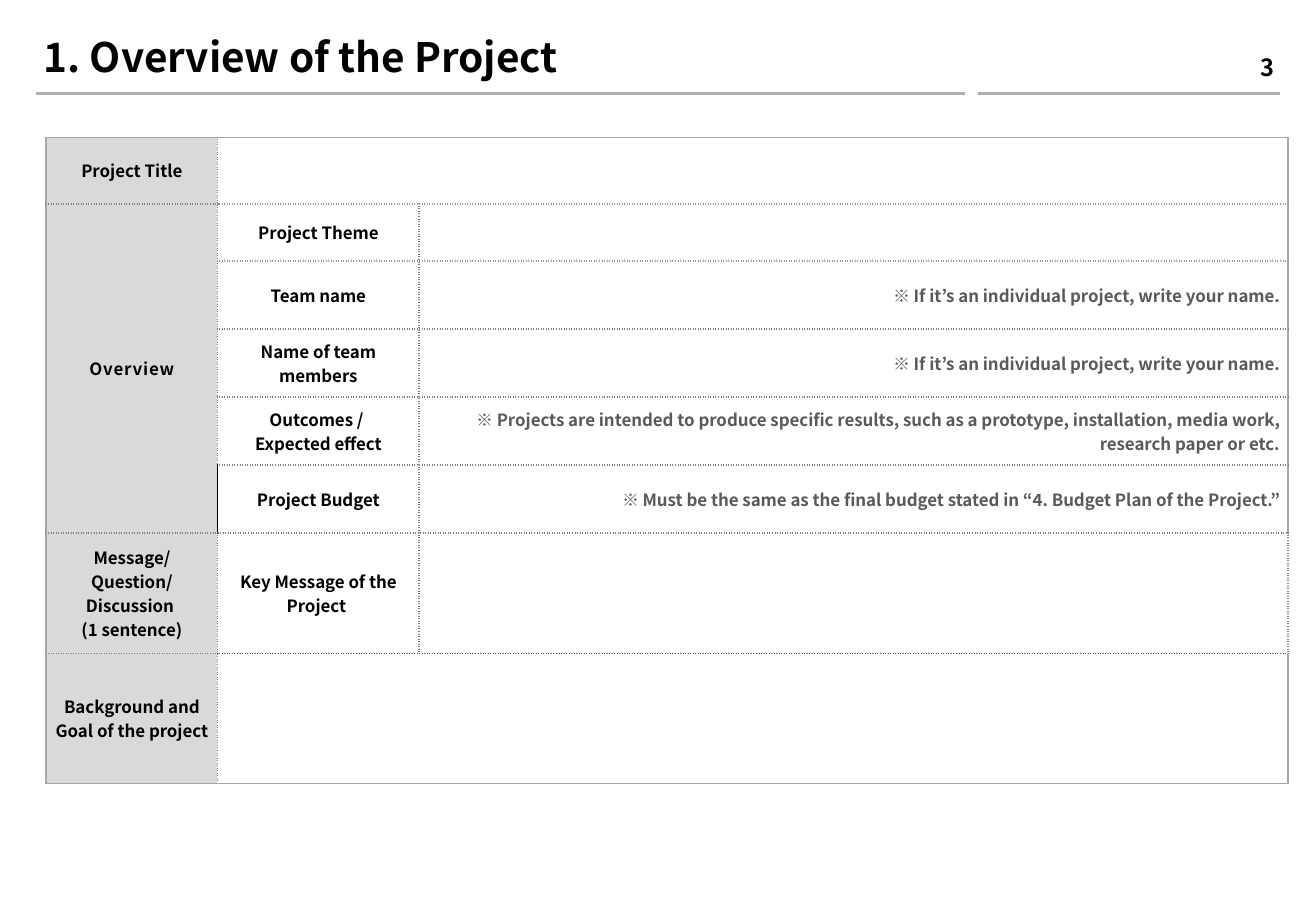
from dataclasses import dataclass

from lxml.etree import SubElement
from pptx import Presentation
from pptx.dml.color import RGBColor
from pptx.enum.shapes import MSO_CONNECTOR
from pptx.enum.text import MSO_ANCHOR, PP_ALIGN
from pptx.oxml.ns import qn
from pptx.util import Inches, Pt


@dataclass(frozen=True)
class Theme:
    font: str = "Noto Sans CJK KR"
    ink: str = "000000"
    hint: str = "595959"
    label_fill: str = "D9D9D9"
    rule: str = "AEAEAE"
    frame: str = "A6A6A6"
    grid: str = "808080"
    soft_grid: str = "989898"
    message_grid: str = "535353"
    title_size: float = 24
    number_size: float = 14
    table_size: float = 10


THEME = Theme()
NO_STYLE = "{2D5ABB26-0587-4C30-8999-92F81FD0307C}"

COLUMN_WIDTHS = [1.41, 1.66, 7.15]
ROW_HEIGHTS = [0.55, 0.47, 0.56, 0.56, 0.56, 0.56, 0.99, 1.07]
LAST_ROW, LAST_COLUMN = len(ROW_HEIGHTS) - 1, len(COLUMN_WIDTHS) - 1
BUDGET_ROW, MESSAGE_ROW = 5, 6

# First row, first column, last row, last column of each merged block
MERGES = [(0, 1, 0, 2), (1, 0, 5, 0), (7, 1, 7, 2)]

OWN_NAME = "※ If it’s an individual project, write your name."
OVERVIEW_ROWS = [
    ["Project Title", "", ""],
    ["Overview", "Project Theme", ""],
    ["", "Team name", OWN_NAME],
    ["", "Name of team members", OWN_NAME],
    ["", "Outcomes / \nExpected effect",
     "※ Projects are intended to produce specific results, such as a prototype, "
     "installation, media work, research paper or etc."],
    ["", "Project Budget",
     "※ Must be the same as the final budget stated in “4. Budget Plan of the Project.”"],
    ["Message/Question/Discussion \n(1 sentence)", "Key Message of the Project ", ""],
    ["Background and Goal of the project", "", ""],
]


def apply(target, values):
    for name, value in values.items():
        setattr(target, name, value)


def write(frame, text, size, color, align):
    frame.text = text
    for paragraph in frame.paragraphs:
        paragraph.alignment = align
        for run in paragraph.runs:
            apply(run.font, {"name": THEME.font, "size": Pt(size), "bold": True})
            run.font.color.rgb = RGBColor.from_string(color)
            SubElement(run.font._element, qn("a:ea")).set("typeface", THEME.font)


def add_rule(slide, start, end, y):
    rule = slide.shapes.add_connector(
        MSO_CONNECTOR.STRAIGHT, Inches(start), Inches(y), Inches(end), Inches(y))
    rule.line.color.rgb = RGBColor.from_string(THEME.rule)
    rule.line.width = Pt(2)
    SubElement(rule._element.spPr, qn("a:effectLst"))


def add_title(slide, text):
    title = slide.shapes.title
    apply(title, {"left": Inches(0.31), "top": Inches(0.21),
                  "width": Inches(7.36), "height": Inches(0.55)})
    inset = Inches(0.05)
    apply(title.text_frame, {
        "vertical_anchor": MSO_ANCHOR.MIDDLE, "word_wrap": True,
        "margin_left": inset, "margin_right": inset,
        "margin_top": inset, "margin_bottom": inset})
    write(title.text_frame, text, THEME.title_size, THEME.ink, PP_ALIGN.LEFT)
    title.text_frame.paragraphs[0].line_spacing = 0.9


def add_page_number(slide, text):
    number = slide.shapes.add_textbox(
        Inches(10.32), Inches(0.38), Inches(0.22), Inches(0.34)).text_frame
    inset = Inches(0.05)
    apply(number, {
        "vertical_anchor": MSO_ANCHOR.MIDDLE, "word_wrap": False,
        "margin_left": inset, "margin_right": inset,
        "margin_top": inset, "margin_bottom": inset})
    write(number, text, THEME.number_size, THEME.ink, PP_ALIGN.RIGHT)


def block_of(row, column):
    for block in MERGES:
        top, left, bottom, right = block
        if top <= row <= bottom and left <= column <= right:
            return block
    return row, column, row, column


def vertical_line(row, boundary):
    """Colour, width and dash of a column boundary beside one row."""
    if boundary == 0:
        return THEME.frame, 1, "solid"
    if boundary > LAST_COLUMN:
        return (THEME.grid, 1, "sysDot") if row == MESSAGE_ROW else (THEME.frame, 1, "solid")
    if boundary == 1 and row == BUDGET_ROW:
        return THEME.ink, 1, "solid"
    return THEME.grid, 1, "sysDot"


def horizontal_line(boundary, column):
    """Colour, width and dash of a row boundary within one column."""
    if boundary in (0, LAST_ROW + 1):
        return THEME.frame, 1, "solid"
    if column == 0:
        return THEME.grid, 1, "sysDot"
    if boundary == LAST_ROW:
        return THEME.message_grid, 0.5, "sysDot"
    return (THEME.soft_grid if boundary <= 2 else THEME.grid), 1, "sysDot"


def draw_borders(cell, row, column):
    top, left, bottom, right = block_of(row, column)
    origin = (row, column) == (top, left)
    sides = [
        ("a:lnL", column == left, vertical_line(row, left)),
        ("a:lnR", column == right, vertical_line(row, right + 1)),
        ("a:lnT", row == top, horizontal_line(top, column)),
        ("a:lnB", row == bottom, horizontal_line(bottom + 1, column)),
    ]
    properties = cell._tc.get_or_add_tcPr()
    for tag, on_edge, (color, width, dash) in sides:
        if origin or on_edge:
            line = SubElement(properties, qn(tag), w=str(Pt(width)))
            SubElement(SubElement(line, qn("a:solidFill")), qn("a:srgbClr"), val=color)
            SubElement(line, qn("a:prstDash"), val=dash)


def fill_cell(cell, row, column, text):
    apply(cell, {
        "vertical_anchor": MSO_ANCHOR.MIDDLE,
        "margin_left": Inches(0.07), "margin_right": Inches(0.07),
        "margin_top": Inches(0.02), "margin_bottom": Inches(0.02)})
    draw_borders(cell, row, column)
    if column == 0:
        cell.fill.solid()
        cell.fill.fore_color.rgb = RGBColor.from_string(THEME.label_fill)
    else:
        cell.fill.background()
    if text:
        is_hint = column == LAST_COLUMN
        write(cell.text_frame, text, THEME.table_size,
              THEME.hint if is_hint else THEME.ink,
              PP_ALIGN.RIGHT if is_hint else PP_ALIGN.CENTER)


def add_overview_table(slide):
    frame = slide.shapes.add_table(
        len(ROW_HEIGHTS), len(COLUMN_WIDTHS), Inches(0.38), Inches(1.13),
        Inches(sum(COLUMN_WIDTHS)), Inches(sum(ROW_HEIGHTS)))
    table = frame.table
    apply(table, {"first_row": False, "horz_banding": False})
    table._tbl.tblPr.find(qn("a:tableStyleId")).text = NO_STYLE
    for column, width in zip(table.columns, COLUMN_WIDTHS):
        column.width = Inches(width)
    for row, height in zip(table.rows, ROW_HEIGHTS):
        row.height = Inches(height)
    for top, left, bottom, right in MERGES:
        table.cell(top, left).merge(table.cell(bottom, right))
    for row, texts in enumerate(OVERVIEW_ROWS):
        for column, text in enumerate(texts):
            fill_cell(table.cell(row, column), row, column, text)
    # Slightly open letter spacing on the merged label
    overview = table.cell(1, 0).text_frame.paragraphs[0].runs[0]
    overview.font._element.set("spc", "50")


def main():
    deck = Presentation()
    apply(deck, {"slide_width": Inches(10.83), "slide_height": Inches(7.5)})
    slide = deck.slides.add_slide(deck.slide_layouts[5])
    # Header
    add_rule(slide, 0.3, 7.94, 0.77)
    add_rule(slide, 8.05, 10.53, 0.77)
    add_title(slide, "1. Overview of the Project")
    add_page_number(slide, "3")
    # Project form
    add_overview_table(slide)
    deck.save("out.pptx")


if __name__ == "__main__":
    main()
